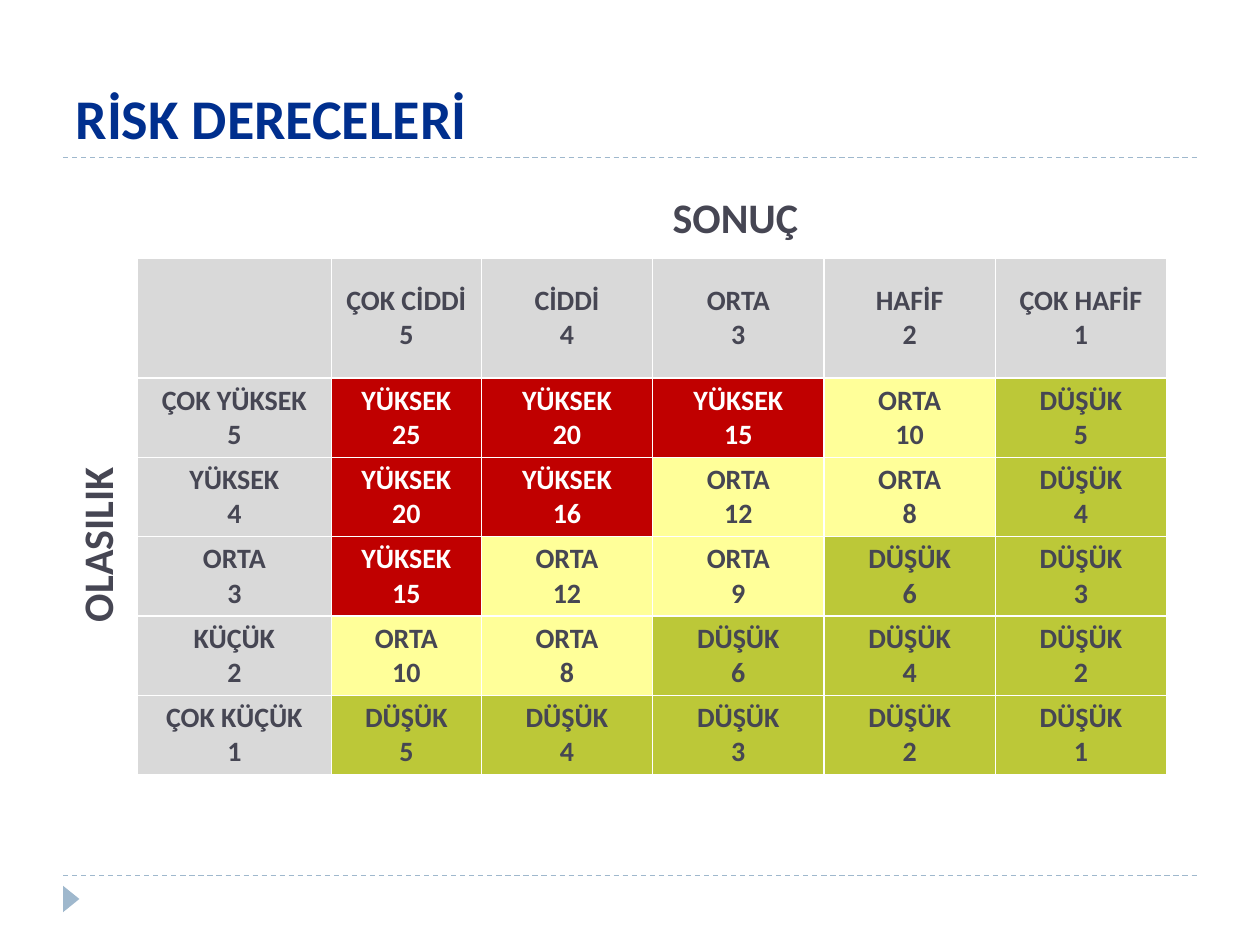
from lxml import etree
from pptx import Presentation
from pptx.dml.color import RGBColor
from pptx.enum import dml, shapes, text
from pptx.oxml.ns import qn
from pptx.util import Inches, Pt

NAVY = RGBColor(0x00, 0x2F, 0x8E)
INK = RGBColor(0x46, 0x46, 0x53)
WHITE = RGBColor(0xFF, 0xFF, 0xFF)
STEEL = RGBColor(0x9F, 0xB8, 0xCD)
GREY = RGBColor(0xD9, 0xD9, 0xD9)
RED = RGBColor(0xC0, 0x00, 0x00)
YELLOW = RGBColor(0xFF, 0xFF, 0x99)
GREEN = RGBColor(0xBC, 0xC8, 0x38)

SEVERITIES = [("ÇOK CİDDİ", 5), ("CİDDİ", 4), ("ORTA", 3), ("HAFİF", 2), ("ÇOK HAFİF", 1)]
LIKELIHOODS = [("ÇOK YÜKSEK", 5), ("YÜKSEK", 4), ("ORTA", 3), ("KÜÇÜK", 2), ("ÇOK KÜÇÜK", 1)]


def write(tf, content, size, color, align=text.PP_ALIGN.LEFT):
    tf.text = content
    for p in tf.paragraphs:
        p.alignment = align
        for r in p.runs:
            r.font.name = "Calibri"
            r.font.size = Pt(size)
            r.font.bold = True
            r.font.color.rgb = color


def fill_cell(cell, label, value, fill, color=INK):
    cell.fill.solid()
    cell.fill.fore_color.rgb = fill
    cell.vertical_anchor = text.MSO_ANCHOR.MIDDLE
    cell.margin_left = cell.margin_right = Inches(0.07)
    cell.margin_top = cell.margin_bottom = 0
    if label:
        write(cell.text_frame, f"{label}\n{value}", 16, color, text.PP_ALIGN.CENTER)


prs = Presentation()
prs.slide_width, prs.slide_height = Inches(10), Inches(7.5)
s = prs.slides.add_slide(prs.slide_layouts[5])

# Rules and corner marker
for y in (6.95, 1.25):
    rule = s.shapes.add_connector(shapes.MSO_CONNECTOR.STRAIGHT,
                                  Inches(0.5), Inches(y), Inches(9.5), Inches(y))
    rule.line.color.rgb = STEEL
    rule.line.width = Pt(0.75)
    rule.line.dash_style = dml.MSO_LINE.DASH
    etree.SubElement(rule._element.spPr, qn("a:effectLst"))

marker = s.shapes.add_shape(shapes.MSO_SHAPE.ISOSCELES_TRIANGLE,
                            Inches(0.46), Inches(7.07), Inches(0.21), Inches(0.13))
marker.rotation = 90
marker.shadow.inherit = False
marker.fill.solid()
marker.fill.fore_color.rgb = STEEL
marker.line.fill.background()

# Title
title = s.shapes.title
title.left, title.top, title.width, title.height = map(Inches, (0.5, 0.17, 9, 1.08))
title.text_frame.vertical_anchor = text.MSO_ANCHOR.BOTTOM
write(title.text_frame, "RİSK DERECELERİ", 32, NAVY)

# Risk matrix: score = likelihood x severity
table = s.shapes.add_table(6, 6, Inches(1.09), Inches(2.05), Inches(8.19), Inches(4.1)).table
table.horz_banding = False
for column, width in zip(table.columns, [1.54, 1.19] + [1.36] * 4):
    column.width = Inches(width)
for row, height in zip(table.rows, [0.95] + [0.63] * 5):
    row.height = Inches(height)

fill_cell(table.cell(0, 0), "", "", GREY)
for i, (label, value) in enumerate(SEVERITIES, 1):
    fill_cell(table.cell(0, i), label, value, GREY)
for i, (label, likelihood) in enumerate(LIKELIHOODS, 1):
    fill_cell(table.cell(i, 0), label, likelihood, GREY)
    for j, (_, severity) in enumerate(SEVERITIES, 1):
        score = likelihood * severity
        if score >= 15:
            level = ("YÜKSEK", score, RED, WHITE)
        elif score >= 8:
            level = ("ORTA", score, YELLOW)
        else:
            level = ("DÜŞÜK", score, GREEN)
        fill_cell(table.cell(i, j), *level)

# Axis names
for name, left, top, width, rotation in (("SONUÇ", 5.24, 1.47, 1.44, 0),
                                         ("OLASILIK", -0.02, 4, 1.57, 270)):
    sp = s.shapes.add_textbox(Inches(left), Inches(top), Inches(width), Inches(0.5))
    sp.rotation = rotation
    sp.text_frame.word_wrap = True
    sp.text_frame.auto_size = text.MSO_AUTO_SIZE.SHAPE_TO_FIT_TEXT
    write(sp.text_frame, name, 24, INK)

prs.save("out.pptx")
